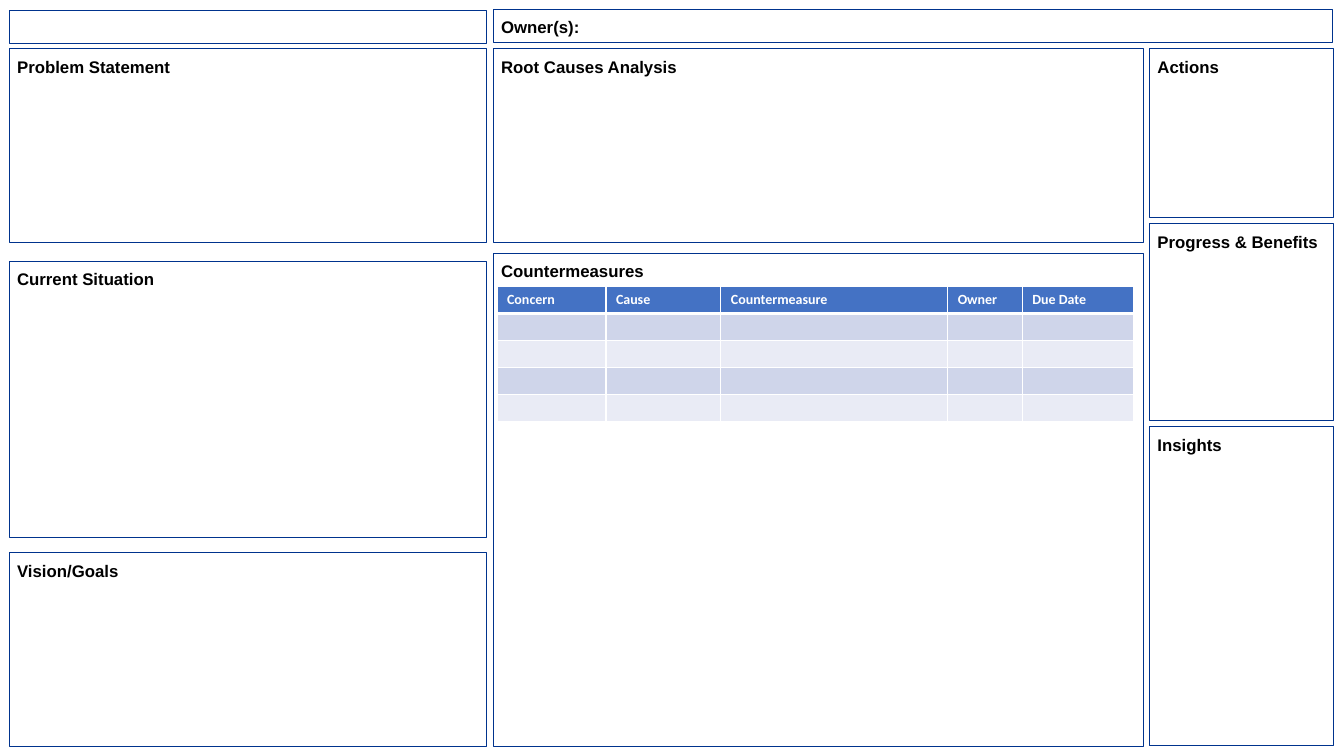
"""Build a one-page A3 problem-solving template slide."""
from lxml.etree import SubElement
from pptx import Presentation
from pptx.dml.color import RGBColor
from pptx.enum.shapes import MSO_SHAPE as SHAPE
from pptx.enum.text import MSO_ANCHOR as ANCHOR, PP_ALIGN as ALIGN
from pptx.oxml.ns import qn
from pptx.util import Inches, Pt

COLORS = {"line": "00338D", "text": "000000", "white": "FFFFFF",
          "head": "4472C4", "odd": "CFD5EA", "even": "E9EBF5"}


def rgb(name):
    return RGBColor.from_string(COLORS[name])


def add_text(p, text, size, font, color):
    r = p.add_run()
    r.text = text
    for key, value in {"size": Pt(size), "name": font, "bold": True}.items():
        setattr(r.font, key, value)
    r.font.color.rgb = rgb(color)


prs = Presentation()
prs.slide_width, prs.slide_height = Inches(13.33), Inches(7.5)
s = prs.slides.add_slide(prs.slide_layouts[6])

COLUMNS = {
    (0.09, 4.73): [("", 0.1, 0.33), ("Problem Statement", 0.48, 1.93),
                   ("Current Situation", 2.59, 2.74), ("Vision/Goals", 5.48, 1.93)],
    (4.89, 8.33): [("Owner(s):", 0.09, 0.33)],
    (4.89, 6.45): [("Root Causes Analysis", 0.48, 1.93), ("Countermeasures", 2.51, 4.89)],
    (11.4, 1.82): [("Actions", 0.48, 1.68), ("Progress & Benefits", 2.22, 1.95),
                   ("Insights", 4.23, 3.17)],
}
FRAME = {"word_wrap": True, "vertical_anchor": ANCHOR.TOP}
FRAME.update({f"margin_{side}": Inches(0.08) for side in ("left", "top", "right", "bottom")})

for (left, width), panels in COLUMNS.items():
    for title, top, height in panels:
        sp = s.shapes.add_shape(SHAPE.RECTANGLE, Inches(left), Inches(top),
                                Inches(width), Inches(height))
        sp.shadow.inherit = False
        sp.fill.background()
        sp.line.color.rgb = rgb("line")
        sp.line.width = Pt(0.5)
        tf = sp.text_frame
        for key, value in FRAME.items():
            setattr(tf, key, value)
        if title:
            p = tf.paragraphs[0]
            p.alignment = ALIGN.LEFT
            add_text(p, title, 12, "Arial", "text")

HEADERS = {"Concern": 1.08, "Cause": 1.14, "Countermeasure": 2.25, "Owner": 0.74, "Due Date": 1.1}
tbl = s.shapes.add_table(5, len(HEADERS), Inches(4.93), Inches(2.84),
                         Inches(6.32), Inches(1.33)).table
for col, width in zip(tbl.columns, HEADERS.values()):
    col.width = Inches(width)

for i, row in enumerate(tbl.rows):
    for cell, header in zip(row.cells, HEADERS):
        tcPr = cell._tc.get_or_add_tcPr()
        for side in "LRTB":
            thick = (i, side) in ((0, "B"), (1, "T"))
            ln = SubElement(tcPr, qn(f"a:ln{side}"), w=str(Pt(3 if thick else 1)))
            SubElement(SubElement(ln, qn("a:solidFill")), qn("a:srgbClr"), val=COLORS["white"])
        cell.fill.solid()
        cell.fill.fore_color.rgb = rgb("head" if i == 0 else "odd" if i % 2 else "even")
        p = cell.text_frame.paragraphs[0]
        if i == 0:
            add_text(p, header, 10, "Calibri", "white")
        else:
            SubElement(p._p, qn("a:endParaRPr"), sz="1000")

prs.save("out.pptx")
